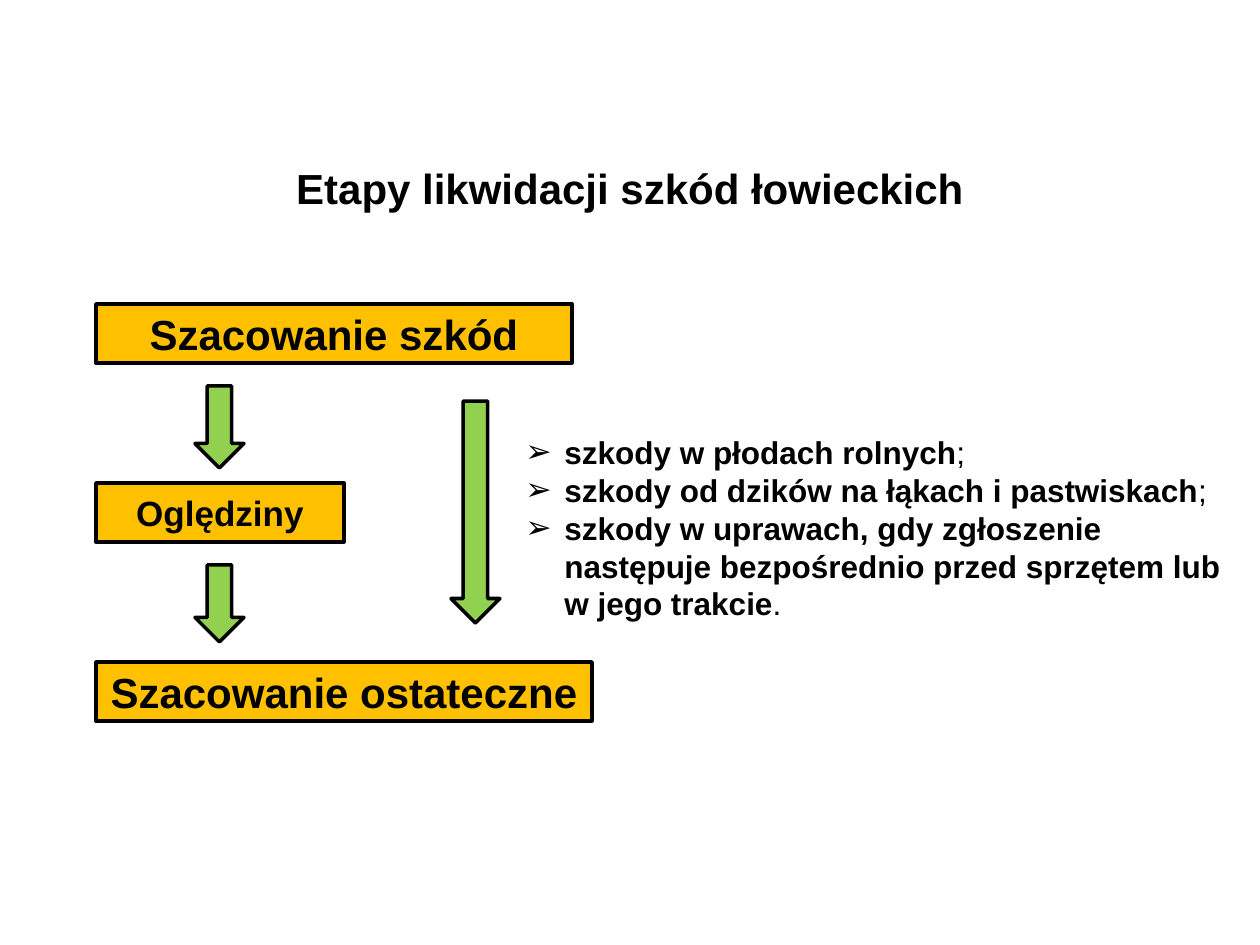
from lxml.etree import SubElement
from pptx import Presentation
from pptx.dml.color import RGBColor
from pptx.enum.shapes import MSO_SHAPE
from pptx.enum.text import MSO_ANCHOR, PP_ALIGN
from pptx.oxml.ns import qn
from pptx.util import Emu, Pt

PX_PER_INCH = 126


def px(length):
    return Emu(round(length * 914400 / PX_PER_INCH))


def color(hex_value):
    return RGBColor.from_string(hex_value)


class SlideBuilder:
    font_name = "Arial"
    ink = "000000"
    stage_fill = "FFC000"
    arrow_fill = "92D050"

    def __init__(self, slide):
        self.slide = slide

    def add_span(self, para, text, size, bold=True):
        span = para.add_run()
        span.text = text
        span.font.name = self.font_name
        span.font.size = Pt(size)
        span.font.bold = bold
        span.font.color.rgb = color(self.ink)

    def title(self, text, left, top, width, height):
        title = self.slide.shapes.title
        title.left, title.top, title.width, title.height = map(px, (left, top, width, height))
        title.text_frame.vertical_anchor = MSO_ANCHOR.MIDDLE
        para = title.text_frame.paragraphs[0]
        para.alignment = PP_ALIGN.CENTER
        self.add_span(para, text, 24)

    def outlined(self, kind, fill, left, top, width, height):
        shape = self.slide.shapes.add_shape(kind, *map(px, (left, top, width, height)))
        shape.shadow.inherit = False
        shape.fill.solid()
        shape.fill.fore_color.rgb = color(fill)
        shape.line.color.rgb = color(self.ink)
        shape.line.width = Pt(2)
        return shape

    def stage(self, text, size, left, top, width, height):
        box = self.outlined(MSO_SHAPE.RECTANGLE, self.stage_fill, left, top, width, height)
        box.text_frame.word_wrap = False
        box.text_frame.vertical_anchor = MSO_ANCHOR.MIDDLE
        para = box.text_frame.paragraphs[0]
        para.alignment = PP_ALIGN.CENTER
        self.add_span(para, text, size)

    def down_arrow(self, left, top, width, height):
        self.outlined(MSO_SHAPE.DOWN_ARROW, self.arrow_fill, left, top, width, height)

    def bullets(self, items, left, top, width, height):
        box = self.slide.shapes.add_textbox(*map(px, (left, top, width, height)))
        frame = box.text_frame
        frame.word_wrap = True
        for index, (text, ending) in enumerate(items):
            para = frame.add_paragraph() if index else frame.paragraphs[0]
            properties = para._p.get_or_add_pPr()
            properties.set("marL", str(px(39)))
            properties.set("indent", str(-px(39)))
            SubElement(properties, qn("a:buFont"), typeface=self.font_name)
            SubElement(properties, qn("a:buChar"), char="➢")
            self.add_span(para, text, 18)
            self.add_span(para, ending, 18, bold=False)


def main():
    deck = Presentation()
    deck.slide_width, deck.slide_height = px(1260), px(945)
    builder = SlideBuilder(deck.slides.add_slide(deck.slide_layouts[5]))

    builder.title("Etapy likwidacji szkód łowieckich", 0, 156, 1260, 63)

    stages = [
        ("Szacowanie szkód", 24, 476),
        ("Oględziny", 20, 248),
        ("Szacowanie ostateczne", 24, 496),
    ]
    for row, (text, size, width) in enumerate(stages):
        builder.stage(text, size, 96, 304 + row * 179, width, 59)

    for left, top, height in [(195, 386, 82), (195, 565, 77), (451, 401, 222)]:
        builder.down_arrow(left, top, 49, height)

    builder.bullets(
        [
            ("szkody w płodach rolnych", ";"),
            ("szkody od dzików na łąkach i pastwiskach", ";"),
            ("szkody w uprawach, gdy zgłoszenie następuje bezpośrednio "
             "przed sprzętem lub w jego trakcie", "."),
        ],
        513, 427, 722, 204,
    )
    deck.save("out.pptx")


if __name__ == "__main__":
    main()
